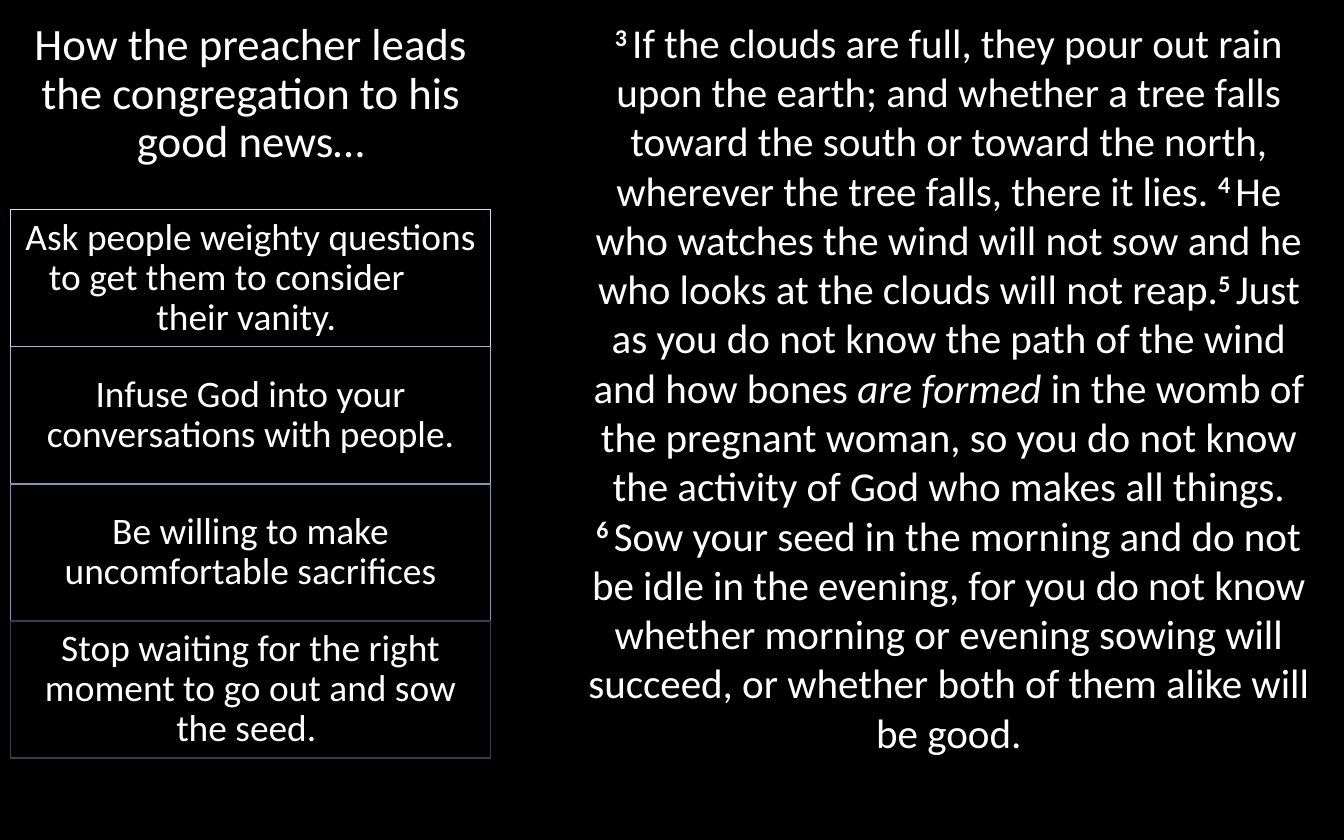
from pptx import Presentation
from pptx.dml.color import RGBColor
from pptx.enum.shapes import MSO_SHAPE
from pptx.enum.text import MSO_ANCHOR, MSO_AUTO_SIZE, PP_ALIGN
from pptx.util import Inches, Pt

RECT = MSO_SHAPE.RECTANGLE
MIDDLE = MSO_ANCHOR.MIDDLE
CENTER = PP_ALIGN.CENTER
GROW = MSO_AUTO_SIZE.SHAPE_TO_FIT_TEXT

FONT = "Calibri"
COLORS = {"back": "000000", "text": "FFFFFF"}
STEPS = [
    ("Ask people weighty questions to get them to consider\t their vanity. ", "D6DCE5"),
    ("Infuse God into your conversations with people.", "ADB9CA"),
    ("Be willing to make uncomfortable sacrifices", "8497B0"),
    ("Stop waiting for the right moment to go out and sow the seed. ", "333F50"),
]
VERSES = [
    [
        ("3 ", "verse"),
        ("If the clouds are full, they pour out rain upon the earth; and whether "
         "a tree falls toward the south or toward the north, wherever the tree "
         "falls, there it lies. ", ""),
        ("4 ", "verse"),
        ("He who watches the wind will not sow and he who looks at the clouds "
         "will not reap.", ""),
        ("5 ", "verse"),
        ("Just as you do not know the path of the wind and how bones ", ""),
        ("are formed", "italic"),
        (" in the womb of the pregnant woman, so you do not know the activity "
         "of God who makes all things.", ""),
    ],
    [
        ("6 ", "verse"),
        ("Sow your seed in the morning and do not be idle in the evening, for "
         "you do not know whether morning or evening sowing will succeed, or "
         "whether both of them alike will be good.", ""),
    ],
]


def tint(name):
    """Return the colour for a palette name or a hex string."""
    return RGBColor.from_string(COLORS.get(name, name))


def add_run(para, text, size, style=""):
    """Add one run, raised and bold for a verse number."""
    run = para.add_run()
    run.text = text
    font = run.font
    font.name, font.size = FONT, Pt(size)
    font.color.rgb = tint("text")
    font.bold = style == "verse"
    font.italic = style == "italic"
    if style == "verse":
        run._r.get_or_add_rPr().set("baseline", "30000")


def fill_label(shape, text, size):
    """Write one centred line of thought in the middle of a shape."""
    frame = shape.text_frame
    frame.word_wrap = True
    frame.vertical_anchor = MIDDLE
    para = frame.paragraphs[0]
    para.alignment = CENTER
    para.line_spacing = 0.9
    add_run(para, text, size)


def add_title(slide, left, top, width, height):
    """Place the heading in its box."""
    box = slide.shapes.add_textbox(left, top, width, height)
    fill_label(box, "How the preacher leads the congregation to his good news…", 24)


def add_steps(slide, left, top, width, height):
    """Stack the outlined steps evenly down the box."""
    row = height // len(STEPS)
    for i, (text, line) in enumerate(STEPS):
        step = slide.shapes.add_shape(RECT, left, top + i * row, width, row)
        step.shadow.inherit = False
        step.fill.background()
        step.line.color.rgb = tint(line)
        step.line.width = Pt(0.75)
        fill_label(step, text, 20)


def add_verses(slide, left, top, width, height):
    """Place the scripture passage in its box."""
    frame = slide.shapes.add_textbox(left, top, width, height).text_frame
    frame.word_wrap = True
    frame.auto_size = GROW
    for i, parts in enumerate(VERSES):
        para = frame.add_paragraph() if i else frame.paragraphs[0]
        para.alignment = CENTER
        for text, style in parts:
            add_run(para, text, 22, style)


def main():
    """Build and save the slide."""
    deck = Presentation()
    deck.slide_width, deck.slide_height = Inches(10), Inches(6.25)
    slide = deck.slides.add_slide(deck.slide_layouts[6])
    back = slide.background.fill
    back.solid()
    back.fore_color.rgb = tint("back")
    edge, width = Inches(0.08), Inches(3.57)
    add_title(slide, edge, edge, width, Inches(1.25))
    add_steps(slide, edge, Inches(1.56), width, Inches(4.08))
    add_verses(slide, Inches(4.2), edge, Inches(5.72), Inches(5.65))
    deck.save("out.pptx")


if __name__ == "__main__":
    main()
